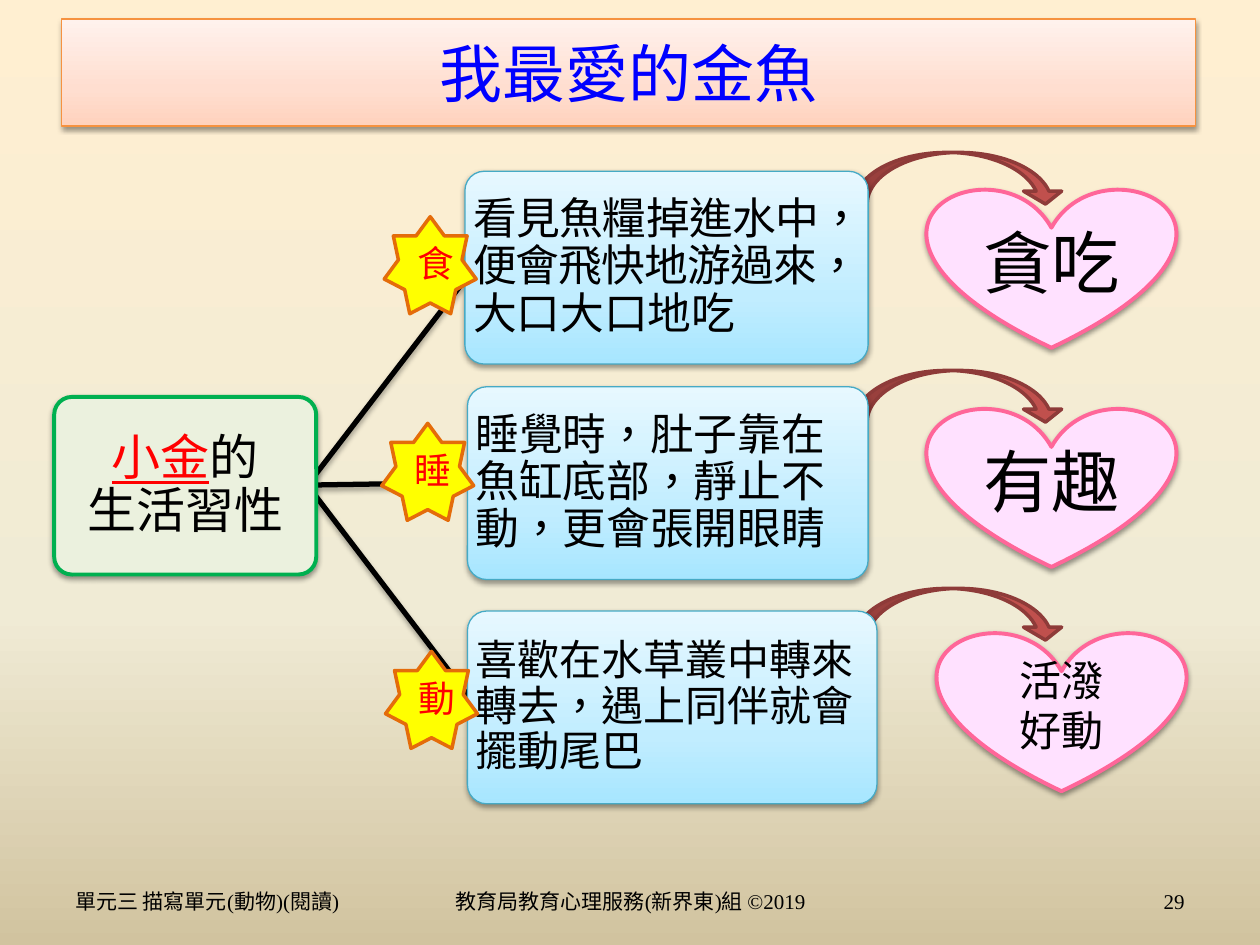
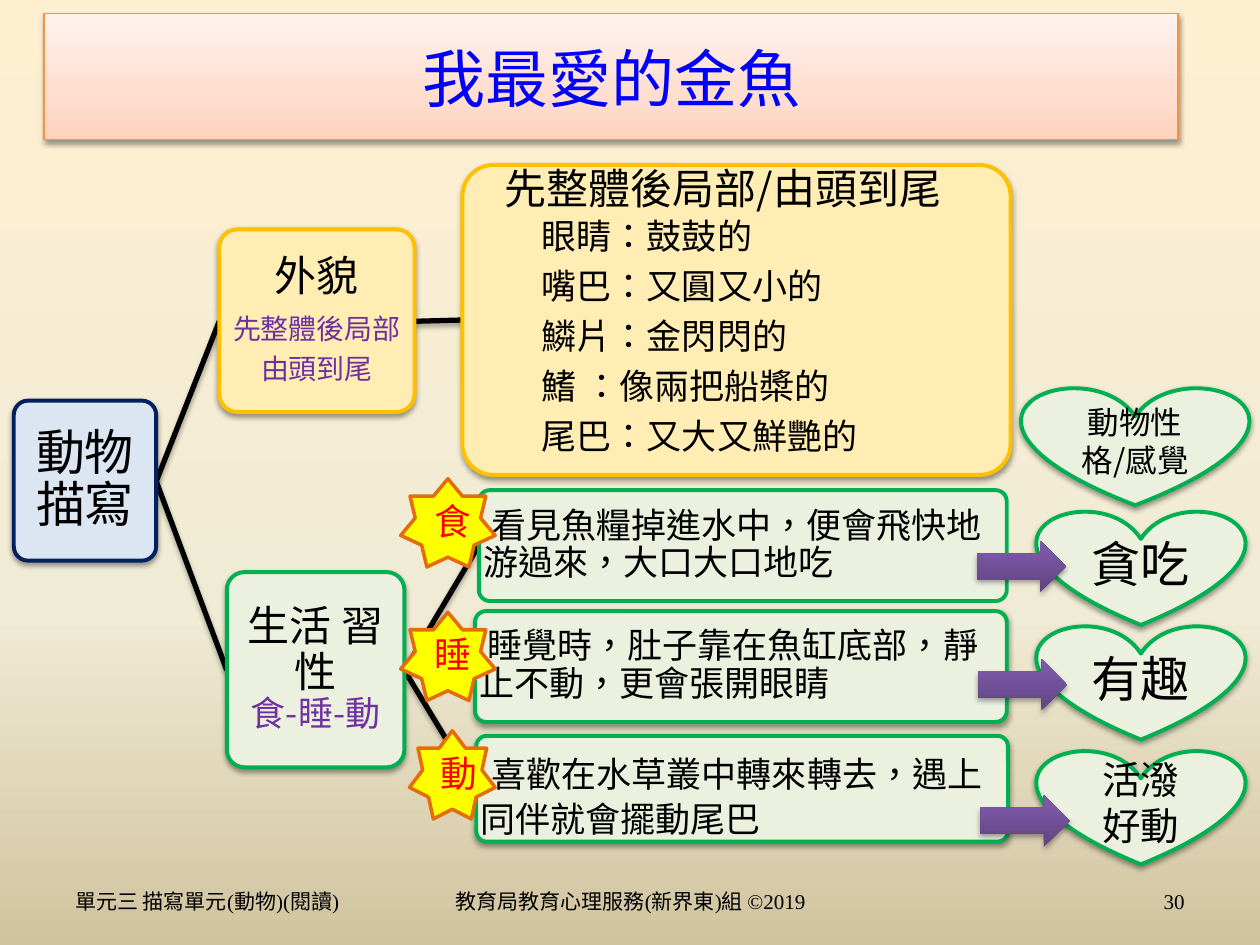
from collections import namedtuple
from dataclasses import dataclass

from lxml import etree
from pptx import Presentation
from pptx import util as u
from pptx.dml.color import RGBColor
from pptx.enum import shapes, text
from pptx.oxml import ns

KIND = shapes.MSO_SHAPE
LEFT, CENTER, RIGHT, JUSTIFY = (
    text.PP_ALIGN.LEFT, text.PP_ALIGN.CENTER, text.PP_ALIGN.RIGHT, text.PP_ALIGN.JUSTIFY)
Box = namedtuple("Box", "left top width height")
Look = namedtuple("Look", "fill line weight shadow", defaults=(None, 0, None))
Habit = namedtuple("Habit", "sign box star heart arrow")


@dataclass(frozen=True)
class Theme:
    body: str = "Noto Sans CJK SC"
    label: str = "Calibri"
    heading: str = "Arial"
    root: str = "Montserrat"
    footer: str = "Times New Roman"
    title_size: int = 36
    topic_size: int = 28
    head_size: int = 24
    detail_size: int = 20
    star_size: int = 21
    trait_size: int = 39
    small_size: int = 16
    footer_size: int = 12
    black: str = "000000"
    red: str = "FF0000"
    blue: str = "0000FF"
    purple: str = "7030A0"
    backdrop: tuple = ((0, "FFEFD1"), (65, "F0EBD5"), (100, "D1C39F"))
    soft: tuple = (38, 3.1, 1.6)
    strong: tuple = (35, 3.1, 1.8)
    banner: Look = Look(((0, "FFD2BD"), (35, "FFDED0"), (100, "FFF2ED")), "F69240", 0.75, soft)
    water: Look = Look(((0, "A7E6FF"), (35, "C1EDFF"), (100, "E7F8FF")), "46AAC5", 0.75, soft)
    star: Look = Look("FFFF00", "E46C0A", 2)
    pink: Look = Look("FFE1FF", "FF6699", 2.25, soft)
    green: Look = Look("EBF1DE", "00B050", 2.25, soft)
    flat_green: Look = Look("EBF1DE", "00B050", 2.25)
    gold: Look = Look("FFEDB3", "FFC000", 2.25, soft)
    flat_gold: Look = Look("FFEDB3")
    navy: Look = Look("DCE6F2", "002060", 2.25, soft)
    curve: Look = Look("C0504D", "8E3B39", 2)
    violet: Look = Look(((0, "5F4480"), (80, "7B58A6"), (100, "7C57A8")), None, 0, strong)


T = Theme()
FOOD = ("看見魚糧掉進水中，便會飛快地游過來，", "大口大口地吃")
SLEEP = "睡覺時，肚子靠在魚缸底部，靜止不動，更會張開眼睛"
MOVE = "喜歡在水草叢中轉來轉去，遇上同伴就會擺動尾巴"


@dataclass
class Para:
    runs: object
    size: float
    font: str = T.body
    color: str = T.black
    align: object = CENTER
    spacing: float = None
    after: float = 0
    tracking: int = 0


def inches(box):
    return [u.Inches(v) for v in box]


def sub(parent, tag, **attributes):
    return etree.SubElement(parent, ns.qn(tag), attributes)


def paint_gradient(fill, owner, stops, angle):
    fill.gradient()
    fill.gradient_angle = angle
    stop_list = owner.find(".//" + ns.qn("a:gsLst"))
    for stop in list(stop_list):
        stop_list.remove(stop)
    for position, color in stops:
        sub(sub(stop_list, "a:gs", pos=str(position * 1000)), "a:srgbClr", val=color)


def cast_shadow(shape, shadow):
    properties = shape._element.spPr
    for old in properties.findall(ns.qn("a:effectLst")):
        properties.remove(old)
    effects = sub(properties, "a:effectLst")
    if shadow:
        alpha, blur, distance = shadow
        outer = sub(effects, "a:outerShdw", blurRad=str(u.Pt(blur)), dist=str(u.Pt(distance)),
                    dir="5400000", rotWithShape="0")
        sub(sub(outer, "a:srgbClr", val=T.black), "a:alpha", val=str(alpha * 1000))


def dress(shape, look):
    if isinstance(look.fill, tuple):
        paint_gradient(shape.fill, shape._element.spPr, look.fill, 90)
    else:
        shape.fill.solid()
        shape.fill.fore_color.rgb = RGBColor.from_string(look.fill)
    if look.line:
        shape.line.color.rgb = RGBColor.from_string(look.line)
        shape.line.width = u.Pt(look.weight)
    else:
        shape.line.fill.background()
    cast_shadow(shape, look.shadow)


def write(shape, paras, inset=(0.1, 0.05), anchor=text.MSO_ANCHOR.MIDDLE):
    frame = shape.text_frame
    frame.word_wrap = True
    frame.auto_size = text.MSO_AUTO_SIZE.NONE
    frame.vertical_anchor = anchor
    frame.margin_left = frame.margin_right = u.Inches(inset[0])
    frame.margin_top = frame.margin_bottom = u.Inches(inset[1])
    for index, para in enumerate(paras):
        line = frame.add_paragraph() if index else frame.paragraphs[0]
        line.alignment = para.align
        line.line_spacing = para.spacing
        line.space_before = u.Pt(0)
        line.space_after = u.Pt(para.size * para.after)
        line.font.name = para.font
        line.font.size = u.Pt(para.size)
        line.font.color.rgb = RGBColor.from_string(para.color)
        defaults = line.font._element
        defaults.set("lang", "zh-TW")
        if para.tracking:
            defaults.set("spc", str(para.tracking))
        defaults.find(ns.qn("a:latin")).addnext(
            etree.Element(ns.qn("a:ea"), {"typeface": T.body}))
        runs = [(para.runs, {})] if isinstance(para.runs, str) else para.runs
        for words, change in runs:
            run = line.add_run()
            run.text = words
            run.font.language_id = None
            run.font._element.set("lang", "zh-TW")
            if "color" in change:
                run.font.color.rgb = RGBColor.from_string(change["color"])
                run.font.underline = True
            if "size" in change:
                run.font.size = u.Pt(change["size"])
            if "tracking" in change:
                run.font._element.set("spc", str(change["tracking"]))


def block(slide, kind, box, look, paras=(), inset=(0.1, 0.05), adjust=()):
    shape = slide.shapes.add_shape(kind, *inches(box))
    for index, value in enumerate(adjust):
        shape.adjustments[index] = value
    dress(shape, look)
    if paras:
        write(shape, paras, inset)


def card(slide, box, look, paras=(), inset=0.02):
    block(slide, KIND.ROUNDED_RECTANGLE, box, look, paras, (inset, inset), (0.1,))


def label(slide, box, para, anchor=text.MSO_ANCHOR.MIDDLE):
    write(slide.shapes.add_textbox(*inches(box)), [para], anchor=anchor)


def branch(slide, start, *ends):
    for end in ends:
        line = slide.shapes.add_connector(
            shapes.MSO_CONNECTOR.STRAIGHT, *inches(start + end))
        line.line.color.rgb = RGBColor.from_string(T.black)
        line.line.width = u.Pt(3)
        cast_shadow(line, T.strong)


def star(slide, habit):
    block(slide, KIND.STAR_7_POINT, habit.star, T.star,
          [Para(habit.sign, T.star_size, T.label, T.red)])


def heart(slide, box, look, words, size):
    lines = words if isinstance(words, tuple) else (words,)
    block(slide, KIND.HEART, box, look, [Para(line, size) for line in lines])


def title_banner(slide, box):
    banner = slide.shapes.title
    banner.left, banner.top, banner.width, banner.height = inches(box)
    sub(sub(banner._element.spPr, "a:prstGeom", prst="roundRect"), "a:avLst")
    dress(banner, T.banner)
    write(banner, [Para("我最愛的金魚", T.title_size, T.heading, T.blue)])


def footers(slide, box, number):
    cells = ((0, 2.85, LEFT, "單元三 描寫單元(動物)(閱讀)"),
             (2.92, 3.17, CENTER, "教育局教育心理服務(新界東)組 ©2019"),
             (6.67, 2.33, RIGHT, str(number)))
    for offset, width, align, words in cells:
        label(slide, Box(box.left + offset, box.top, width, box.height),
              Para(words, T.footer_size, T.footer, align=align))


def start_slide(deck, banner_box, number):
    slide = deck.slides.add_slide(deck.slide_layouts[5])
    title_banner(slide, banner_box)
    footers(slide, Box(0.5, 6.95, 9, 0.4), number)
    return slide


def habits_slide(deck):
    slide = start_slide(deck, Box(0.49, 0.15, 9, 0.85), 29)
    details = (
        Para([(FOOD[0], {}), (FOOD[1], {"tracking": 0})], 25, align=JUSTIFY,
             spacing=0.9, after=0.35, tracking=-150),
        Para(SLEEP, 25, align=LEFT, spacing=0.9, after=0.35),
        Para(MOVE, T.head_size, align=LEFT, spacing=0.9, after=0.35))
    spots = (("食", 3.69, 1.36, 3.2, 3.05, 1.72, 7.36, 1.49),
             ("睡", 3.71, 3.07, 3.18, 3.03, 3.36, 7.36, 3.23),
             ("動", 3.71, 4.85, 3.25, 3.06, 5.17, 7.44, 5.01))
    habits = [Habit(sign, Box(left, top, width, 1.53), Box(star_x, star_y, 0.73, 0.77),
                    Box(heart_x, heart_y, 1.97, 1.27), Box(6.78, 1.21 + 1.73 * row, 1.67, 0.41))
              for row, (sign, left, top, width, star_x, star_y, heart_x, heart_y)
              in enumerate(spots)]
    for habit in habits:
        block(slide, KIND.CURVED_DOWN_ARROW, habit.arrow, T.curve, adjust=(0.25, 0.74, 0.25))
    branch(slide, (2.44, 3.85), (3.76, 2.13), (3.71, 3.83), (3.79, 5.62))
    for habit, detail in zip(habits, details):
        card(slide, habit.box, T.water, [detail])
    for habit in habits:
        star(slide, habit)
    card(slide, Box(0.43, 3.15, 2.08, 1.41), T.green, [
        Para([("小金", {"color": T.red}), ("的", {})], T.topic_size, T.root, spacing=0.9),
        Para("生活習性", T.topic_size, spacing=0.9)])
    traits = (("貪吃", T.trait_size), ("有趣", T.trait_size), (("活潑", "好動"), T.head_size))
    for habit, trait in zip(habits, traits):
        heart(slide, habit.heart, T.pink, *trait)


def appearance(slide, box):
    card(slide, Box(box.left, box.top + 0.51, 1.55, 1.45), T.gold, [
        Para("外貌", T.head_size, spacing=0.9, after=0.35),
        Para("先整體後局部", T.small_size, color=T.purple, spacing=0.9, after=0.35),
        Para("由頭到尾", T.small_size, color=T.purple, spacing=0.9, after=0.35)])
    card(slide, Box(box.left + 1.93, box.top, box.width - 1.93, box.height), T.gold)
    features = ("眼睛：鼓鼓的", "嘴巴：又圓又小的", "鱗片：金閃閃的",
                "鰭 ：像兩把船槳的", "尾巴：又大又鮮艷的")
    block(slide, KIND.RECTANGLE, Box(box.left + 2.51, box.top + 0.43, 2.67, 1.89), T.flat_gold,
          [Para(feature, T.detail_size, T.heading, align=LEFT, spacing=0.9, after=0.35)
           for feature in features], (0.05, 0.03))
    label(slide, Box(box.left + 1.99, box.top - 0.07, 4.02, 0.5),
          Para("先整體後局部/由頭到尾", T.head_size), text.MSO_ANCHOR.TOP)


def living_habits(slide, box):
    card(slide, Box(box.left, box.top + 0.65, 1.41, 1.55), T.green, [
        Para("生活 習性", T.head_size, spacing=0.9),
        Para("食-睡-動", T.detail_size, color=T.purple, spacing=0.9)])
    details = (
        Para(" " + "".join(FOOD), T.detail_size, align=LEFT, spacing=0.9, after=0.35),
        Para(" " + SLEEP, T.detail_size, align=LEFT, spacing=0.9, after=0.35),
        Para([(" ", {"size": T.topic_size}), (MOVE, {})], T.detail_size, align=LEFT))
    traits = (("貪吃", T.topic_size), ("有趣", T.topic_size), ("活潑好動", 22))
    looks = (T.flat_green, T.green, T.green)
    spots = (("食", 2, 0, 4.19, 0.88, 1.38, -0.09, 0.75, 0.16, 5.95, 0.4),
             ("睡", 1.97, 0.96, 4.22, 0.88, 1.38, 0.97, 0.75, 1.07, 5.96, 1.34),
             ("動", 1.98, 1.95, 4.22, 0.84, 1.45, 1.91, 0.68, 2.06, 5.98, 2.42))
    x, y = box.left, box.top
    habits = [Habit(sign, Box(x + left, y + top, width, height),
                    Box(x + star_x, y + star_y, star_w, 0.7),
                    Box(x + 6.43, y + heart_y, 1.65, 0.91),
                    Box(x + arrow_x, y + arrow_y, 0.71, 0.41))
              for sign, left, top, width, height, star_x, star_y, star_w,
              heart_y, arrow_x, arrow_y in spots]
    for habit, detail, look in zip(habits, details, looks):
        card(slide, habit.box, look, [detail], 0.01)
    for habit, trait in zip(habits, traits):
        star(slide, habit)
        heart(slide, habit.heart, T.green, *trait)
    heart(slide, Box(x + 6.31, y - 0.82, 1.8, 0.94), T.green, "動物性格/感覺", 18)
    for habit in habits:
        block(slide, KIND.RIGHT_ARROW, habit.arrow, T.violet)


def summary_slide(deck):
    slide = start_slide(deck, Box(0.35, 0.11, 9, 1), 30)
    branch(slide, (1.24, 3.82), (1.74, 2.55), (1.8, 5.32))
    branch(slide, (3.29, 2.55), (3.67, 2.54))
    branch(slide, (3.21, 5.32), (3.8, 4.33), (3.77, 5.29), (3.78, 6.26))
    card(slide, Box(0.11, 3.18, 1.13, 1.27), T.navy,
         [Para("動物 描寫", T.topic_size, spacing=0.9, after=0.35)])
    appearance(slide, Box(1.74, 1.31, 6.28, 2.46))
    living_habits(slide, Box(1.8, 3.89, 8.11, 2.97))


def main():
    deck = Presentation()
    deck.slide_width, deck.slide_height = u.Inches(10), u.Inches(7.5)
    master = deck.slide_master
    paint_gradient(master.background.fill, master.element, T.backdrop, 270)
    habits_slide(deck)
    summary_slide(deck)
    deck.save("out.pptx")


if __name__ == "__main__":
    main()
